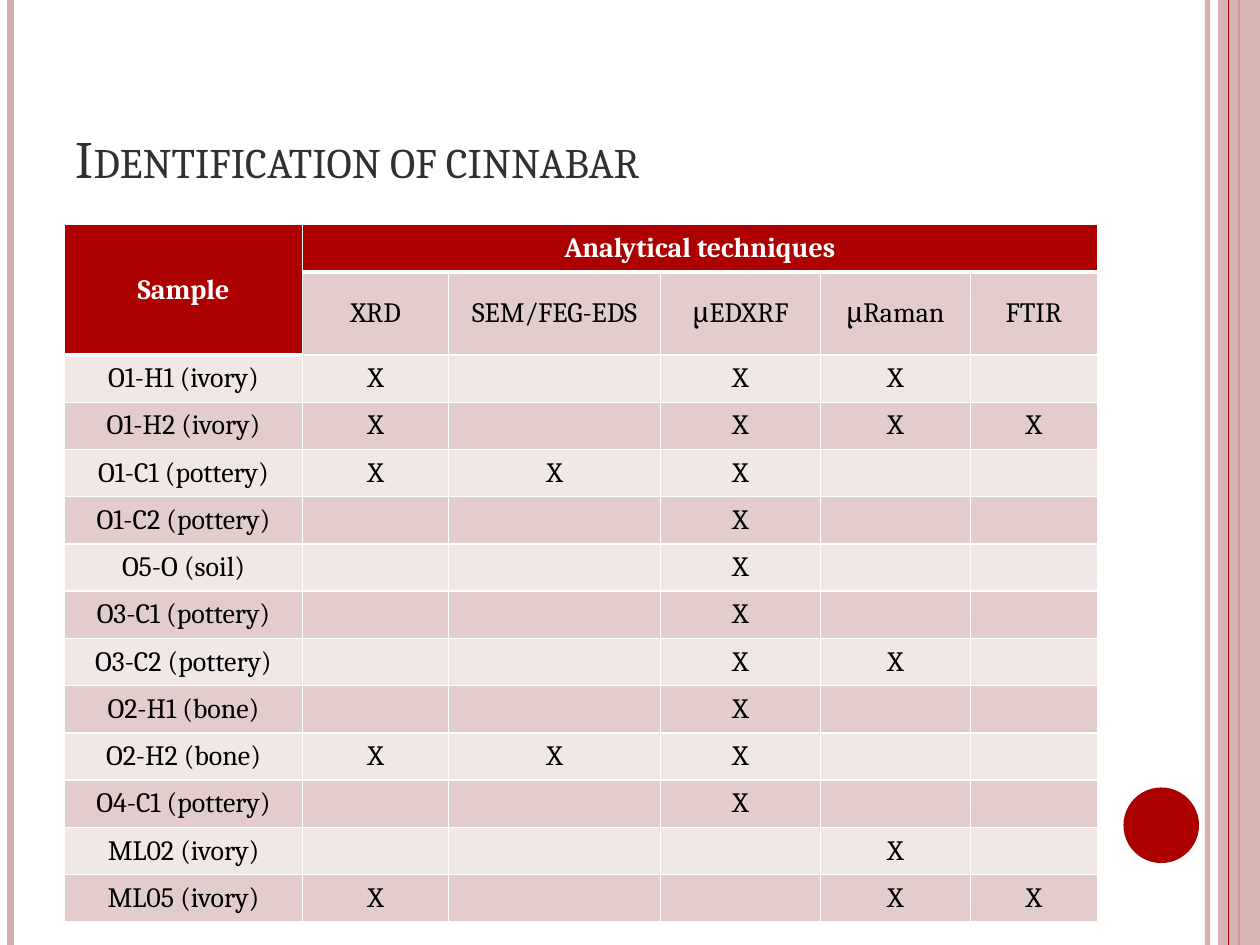
from lxml import etree
from pptx import Presentation
from pptx.dml.color import RGBColor
from pptx.enum.shapes import MSO_CONNECTOR, MSO_SHAPE
from pptx.enum.text import MSO_ANCHOR, PP_ALIGN
from pptx.oxml.ns import qn
from pptx.util import Pt

LINE = MSO_CONNECTOR.STRAIGHT
RECT, OVAL = MSO_SHAPE.RECTANGLE, MSO_SHAPE.OVAL
MID, LOW = MSO_ANCHOR.MIDDLE, MSO_ANCHOR.BOTTOM
LEFT, MIDDLE = PP_ALIGN.LEFT, PP_ALIGN.CENTER
FACE = "Cambria"
HUES = {"red": "AD0101", "rose": "D3ABAB", "dark": "E3CCCC", "pale": "F1E7E7",
        "white": "FFFFFF", "black": "000000", "title": "303030"}


def tint(fill, hue, alpha=100):
    fill.solid()
    fill.fore_color.rgb = RGBColor.from_string(HUES[hue])
    if alpha < 100:
        tone = next(fill._xPr.iter(qn("a:srgbClr")))
        etree.SubElement(tone, qn("a:alpha"), val=str(alpha * 1000))


def style(font, **form):
    tint(font.fill, form.pop("hue"))
    for key, value in form.items():
        setattr(font, key, value)


deck = Presentation()
deck.slide_width, deck.slide_height = Pt(720), Pt(540)
slide = deck.slides.add_slide(deck.slide_layouts[5])
shapes = slide.shapes

bars = [(690, "rose", 3, 93), (6, "rose", 4.5, 100),
        (708, "red", 1.5, 100), (702, "red", 0.75, 100)]
blocks = [(RECT, 696, 0, 24, 540, "rose", 87),
          (OVAL, 642, 450, 43.2, 43.2, "red", 100)]


for x, hue, width, alpha in bars[:3]:
    bar = shapes.add_connector(LINE, Pt(x), Pt(0), Pt(x), Pt(540))
    tint(bar.line.fill, hue, alpha)
    bar.line.width = Pt(width)
    etree.SubElement(bar._element.spPr, qn("a:effectLst"))

for kind, x, y, wide, high, hue, alpha in blocks:
    block = shapes.add_shape(kind, Pt(x), Pt(y), Pt(wide), Pt(high))
    block.shadow.inherit = False
    tint(block.fill, hue, alpha)
    block.line.fill.background()

for x, hue, width, alpha in bars[3:]:
    bar = shapes.add_connector(LINE, Pt(x), Pt(0), Pt(x), Pt(540))
    tint(bar.line.fill, hue, alpha)
    bar.line.width = Pt(width)
    etree.SubElement(bar._element.spPr, qn("a:effectLst"))

title = shapes.title
place = {"left": 36, "top": 21.6, "width": 588, "height": 90}
for key, value in place.items():
    setattr(title, key, Pt(value))
frame = title.text_frame
frame.text = "Identification of cinnabar"
frame.vertical_anchor = LOW
frame.word_wrap = True
para = frame.paragraphs[0]
para.alignment = LEFT
run = para.runs[0]
style(run.font, name=FACE, size=Pt(30), hue="title")
run._r.get_or_add_rPr().set("cap", "small")

tests = ["XRD", "SEM/FEG-EDS", "μEDXRF", "μRaman", "FTIR"]
marks = {
    "O1-H1 (ivory)": "X.XX.",
    "O1-H2 (ivory)": "X.XXX",
    "O1-C1 (pottery)": "XXX..",
    "O1-C2 (pottery)": "..X..",
    "O5-O (soil)": "..X..",
    "O3-C1 (pottery)": "..X..",
    "O3-C2 (pottery)": "..XX.",
    "O2-H1 (bone)": "..X..",
    "O2-H2 (bone)": "XXX..",
    "O4-C1 (pottery)": "..X..",
    "ML02 (ivory)": "...X.",
    "ML05 (ivory)": "X..XX",
}
rows = [["Sample", "Analytical techniques", "", "", "", ""], ["", *tests]]
rows += [[name, *row.replace(".", " ")] for name, row in marks.items()]
widths = [136, 83.5, 121, 91.4, 85.7, 72.6]
highs = [27, 47.5] + [27] * len(marks)

table = shapes.add_table(len(rows), len(widths), Pt(36.9), Pt(128.4),
                         Pt(sum(widths)), Pt(sum(highs))).table
for col, width in zip(table.columns, widths):
    col.width = Pt(width)
for row, high in zip(table.rows, highs):
    row.height = Pt(high)
table.cell(0, 0).merge(table.cell(1, 0))
table.cell(0, 1).merge(table.cell(0, 5))

heads = {(0, c) for c in range(len(widths))} | {(1, 0)}
for r, row in enumerate(rows):
    for c, text in enumerate(row):
        cell = table.cell(r, c)
        head = (r, c) in heads
        below = not head and (r - 1, c) in heads
        cell.vertical_anchor = MID
        props = cell._tc.get_or_add_tcPr()
        edges = {"lnL": 1, "lnR": 1, "lnT": 3 if below else 1, "lnB": 3 if head else 1}
        for edge, width in edges.items():
            line = etree.SubElement(props, qn("a:" + edge), w=str(Pt(width)))
            solid = etree.SubElement(line, qn("a:solidFill"))
            etree.SubElement(solid, qn("a:srgbClr"), val=HUES["white"])
        tint(cell.fill, "red" if head else "dark" if r % 2 else "pale")
        para = cell.text_frame.paragraphs[0]
        para.alignment = MIDDLE
        if text.strip():
            run = para.add_run()
            run.text = text
            style(run.font, name=FACE, size=Pt(16), bold=head,
                  hue="white" if head else "black")
        else:
            etree.SubElement(para._p, qn("a:endParaRPr"), sz="1600")

deck.save("out.pptx")
